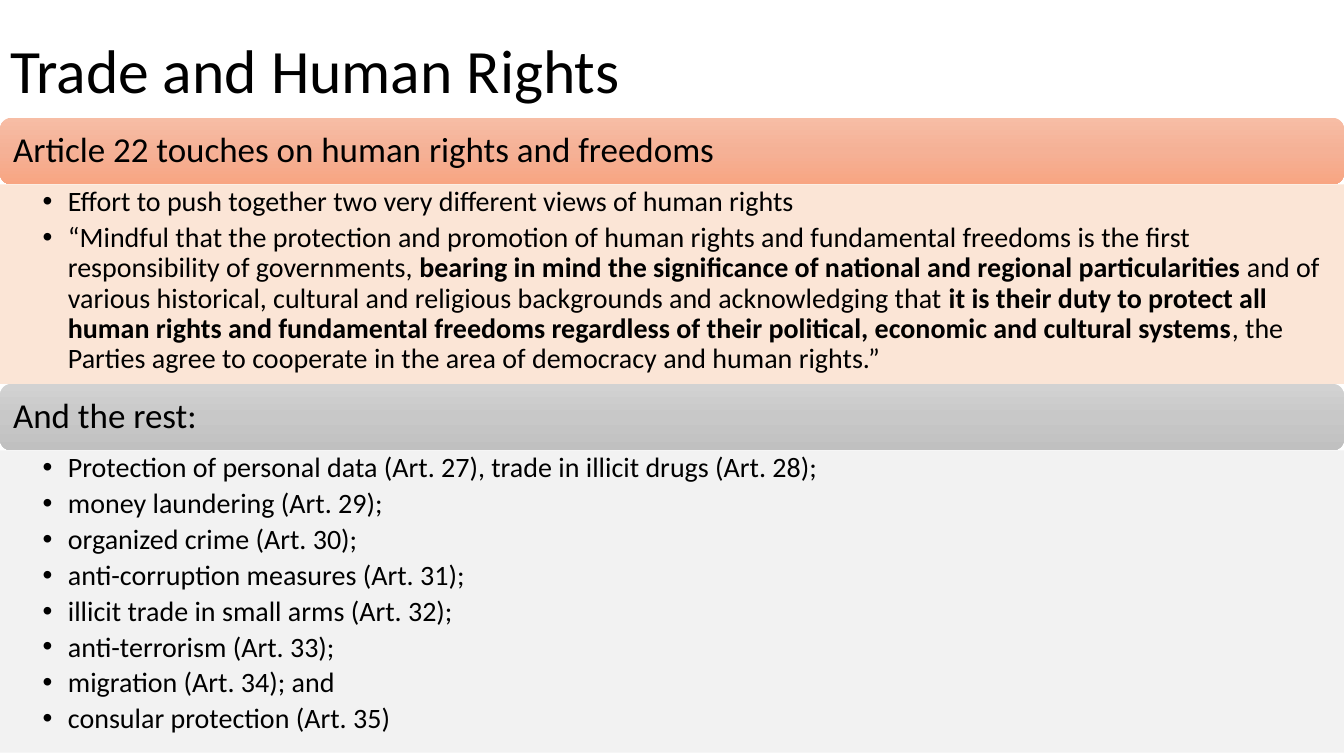
from copy import deepcopy
from dataclasses import dataclass

from pptx import Presentation
from pptx.dml.color import RGBColor
from pptx.enum.shapes import MSO_SHAPE
from pptx.enum.text import MSO_ANCHOR, MSO_AUTO_SIZE, PP_ALIGN
from pptx.oxml.ns import qn
from pptx.util import Pt

ROUNDED = MSO_SHAPE.ROUNDED_RECTANGLE
TOP, MIDDLE = MSO_ANCHOR.TOP, MSO_ANCHOR.MIDDLE
LEFT = PP_ALIGN.LEFT
NO_FIT = MSO_AUTO_SIZE.NONE
TWO_CONTENT = 3


@dataclass(frozen=True)
class Theme:
    font: str = "Calibri"
    text: str = "000000"
    title_size: int = 44
    heading_size: int = 25
    body_size: int = 20
    orange: tuple = ("F7BDA5", "F5B196", "F8A582")
    orange_tint: str = "FBE5D6"
    gray: tuple = ("D2D2D2", "C8C8C8", "C0C0C0")
    gray_tint: str = "F2F2F2"


THEME = Theme()
WIDTH, HEIGHT = 960, 540
STACK_TOP, HEADING_HEIGHT = 84.25, 47.4
BULLET_INDENT = Pt(18)

SECTIONS = [
    (
        "Article 22 touches on human rights and freedoms",
        THEME.orange, THEME.orange_tint, 142.6,
        [
            ["Effort to push together two very different views of human rights"],
            [
                "“Mindful that the protection and promotion of human rights and "
                "fundamental freedoms is the first responsibility of governments, ",
                "bearing in mind the significance of national and regional particularities",
                " and of various historical, cultural and religious backgrounds "
                "and acknowledging that ",
                "it is their duty to protect all human rights and fundamental freedoms "
                "regardless of their political, economic and cultural systems",
                ", the Parties agree to cooperate in the area of democracy and human rights.”",
            ],
        ],
    ),
    (
        "And the rest:",
        THEME.gray, THEME.gray_tint, 216,
        [
            ["Protection of personal data (Art. 27), trade in illicit drugs (Art. 28);"],
            ["money laundering (Art. 29);"],
            ["organized crime (Art. 30);"],
            ["anti-corruption measures (Art. 31);"],
            ["illicit trade in small arms (Art. 32);"],
            ["anti-terrorism (Art. 33);"],
            ["migration (Art. 34); and"],
            ["consular protection (Art. 35)"],
        ],
    ),
]


def apply(obj, **values):
    for name, value in values.items():
        setattr(obj, name, value)


def place(sp, left, top, width, height):
    apply(sp, left=Pt(left), top=Pt(top), width=Pt(width), height=Pt(height))


def format_frame(tf, anchor, left=7.2, right=7.2, vertical=3.6):
    apply(tf, word_wrap=True, auto_size=NO_FIT, vertical_anchor=anchor,
          margin_left=Pt(left), margin_right=Pt(right),
          margin_top=Pt(vertical), margin_bottom=Pt(vertical))


def write_paragraph(p, segments, size, after=0):
    apply(p, alignment=LEFT, line_spacing=0.9,
          space_before=Pt(0), space_after=Pt(after))
    for i, segment in enumerate(segments):
        r = p.add_run()
        r.text = segment
        apply(r.font, name=THEME.font, size=Pt(size), bold=i % 2 == 1)
        r.font.color.rgb = RGBColor.from_string(THEME.text)


def fill_gradient(sp, colors):
    sp.fill.gradient()
    sp.fill.gradient_angle = 270
    stops = sp._element.spPr.find(".//" + qn("a:gsLst"))
    stops.insert(1, deepcopy(stops[0]))
    for i, (stop, color) in enumerate(zip(sp.fill.gradient_stops, colors)):
        stop.position = i / (len(colors) - 1)
        stop.color.rgb = RGBColor.from_string(color)


def set_title(sp, text):
    place(sp, 0, 0, 828, 104.4)
    format_frame(sp.text_frame, MIDDLE)
    write_paragraph(sp.text_frame.paragraphs[0], [text], THEME.title_size)


def add_heading(slide, text, top, colors):
    sp = slide.shapes.add_shape(ROUNDED, 0, Pt(top), Pt(WIDTH), Pt(HEADING_HEIGHT))
    sp.shadow.inherit = False
    fill_gradient(sp, colors)
    sp.line.fill.background()
    format_frame(sp.text_frame, MIDDLE)
    write_paragraph(sp.text_frame.paragraphs[0], [text], THEME.heading_size)


def set_list(sp, items, top, height, color):
    place(sp, 0, top, WIDTH, height)
    sp.fill.solid()
    sp.fill.fore_color.rgb = RGBColor.from_string(color)
    tf = sp.text_frame
    format_frame(tf, TOP, left=30.5, right=13.5, vertical=2.4)
    for i, segments in enumerate(items):
        p = tf.add_paragraph() if i else tf.paragraphs[0]
        pPr = p._p.get_or_add_pPr()
        pPr.set("marL", str(BULLET_INDENT))
        pPr.set("indent", str(-BULLET_INDENT))
        write_paragraph(p, segments, THEME.body_size, after=4)


def main():
    prs = Presentation()
    apply(prs, slide_width=Pt(WIDTH), slide_height=Pt(HEIGHT))
    slide = prs.slides.add_slide(prs.slide_layouts[TWO_CONTENT])
    title, *bodies = slide.placeholders
    set_title(title, "Trade and Human Rights")
    top = STACK_TOP
    for body, (heading, colors, tint, height, items) in zip(bodies, SECTIONS):
        add_heading(slide, heading, top, colors)
        set_list(body, items, top + HEADING_HEIGHT, height, tint)
        top += HEADING_HEIGHT + height
    prs.save("out.pptx")


if __name__ == "__main__":
    main()
